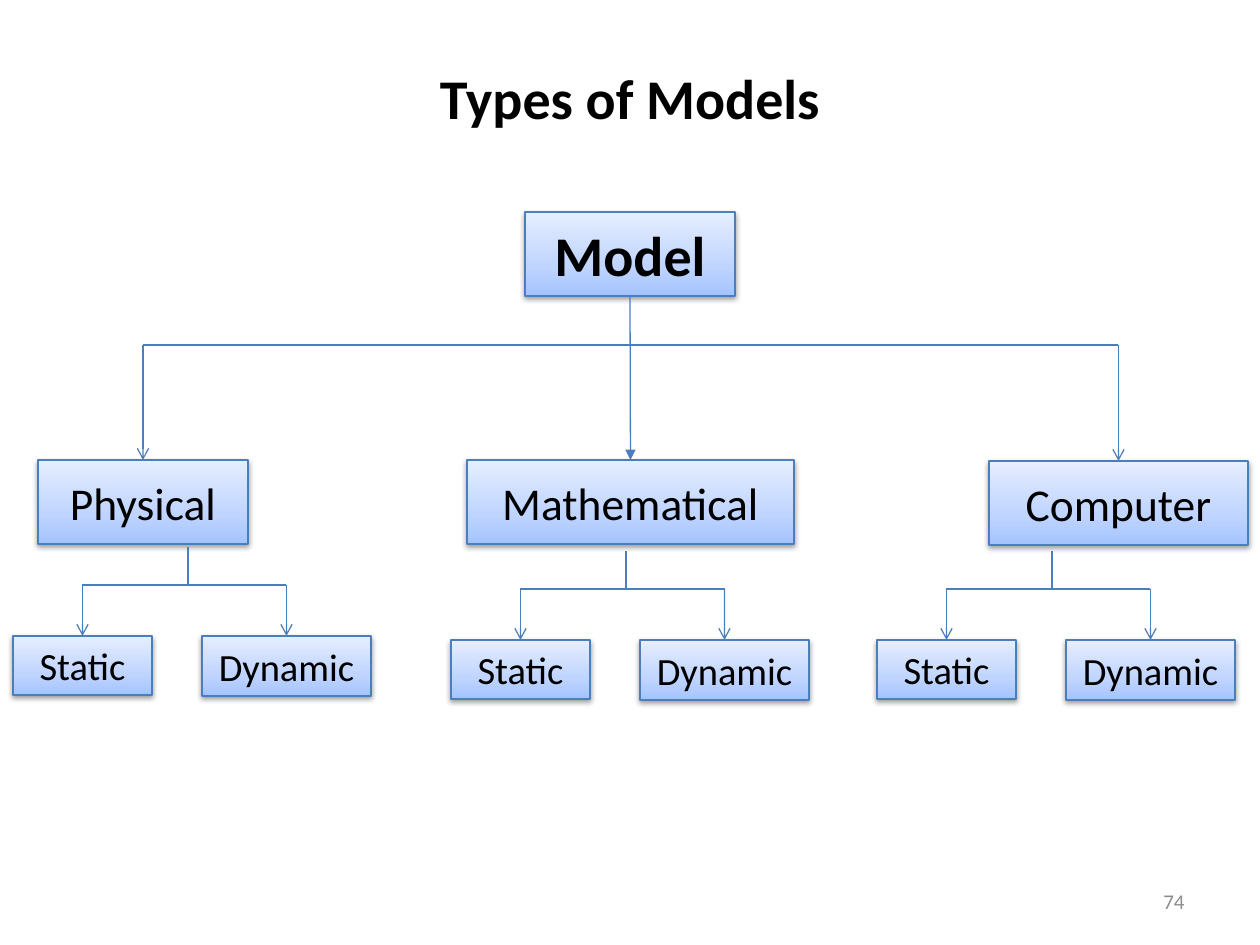
from copy import deepcopy

from lxml.etree import SubElement
from pptx import Presentation
from pptx.dml.color import RGBColor
from pptx.enum.shapes import MSO_CONNECTOR as Connector, MSO_SHAPE as Shape
from pptx.enum.text import MSO_ANCHOR as Anchor, PP_ALIGN as Align
from pptx.oxml.ns import qn
from pptx.util import Pt

# Content: label, then left, top, width, height in px
TITLE = ("Types of Models", (63, 53, 1134, 88))
PAGE_NUMBER = ("74", (903, 876, 294, 50))
ROOT = ("Model", (525, 212, 210, 84))
BRANCHES = [
    ("Physical", (38, 460, 210, 84)),
    ("Mathematical", (467, 460, 327, 84)),
    ("Computer", (989, 461, 259, 84)),
]
SUBTYPE_ORIGINS = [(13, 636), (451, 640), (877, 640)]
SUBTYPES = [("Static", (0, 0, 139, 59)), ("Dynamic", (189, 0, 169, 60))]
MAIN_RAIL_Y = 345
STEM_X, STEM_RISE, RAIL_RISE = 175, 89, 51  # measured from a subtype origin

# Style
BLACK = RGBColor(0x00, 0x00, 0x00)
GRAY = RGBColor(0x8C, 0x8C, 0x8C)
LINE_BLUE = RGBColor(0x4B, 0x7E, 0xBC)
GRADIENT = [
    (0, RGBColor(0xA4, 0xC4, 0xFF)),
    (0.35, RGBColor(0xBF, 0xD4, 0xFF)),
    (1, RGBColor(0xE6, 0xEE, 0xFF)),
]
HEADING = {"size": Pt(32), "bold": True}
BRANCH_FONT = {"size": Pt(26)}
SUBTYPE_FONT = {"size": Pt(22)}
EMU_PER_PX = 914400 / 126
TOP, BOTTOM = 0, 2


def px(*lengths):
    return [round(length * EMU_PER_PX) for length in lengths]


def write(shape, text, font_format, color=BLACK, align=Align.CENTER):
    frame = shape.text_frame
    frame.word_wrap = True
    frame.vertical_anchor = Anchor.MIDDLE
    paragraph = frame.paragraphs[0]
    paragraph.alignment = align
    run = paragraph.add_run()
    run.text = text
    for name, value in {"name": "Calibri", **font_format}.items():
        setattr(run.font, name, value)
    run.font.color.rgb = color


def add_shadow(shape):
    shape.shadow.inherit = False
    effects = shape._element.spPr.find(qn("a:effectLst"))
    shadow = SubElement(effects, qn("a:outerShdw"), blurRad="40000",
                        dist="20000", dir="5400000", rotWithShape="0")
    color = SubElement(shadow, qn("a:srgbClr"), val="000000")
    SubElement(color, qn("a:alpha"), val="38000")


def add_box(slide, label, area, font_format):
    box = slide.shapes.add_shape(Shape.RECTANGLE, *px(*area))
    box.fill.gradient()
    box.fill.gradient_angle = 90
    stop_list = box._element.spPr.find(qn("a:gradFill")).find(qn("a:gsLst"))
    stop_list.append(deepcopy(stop_list[0]))
    for stop, (position, color) in zip(box.fill.gradient_stops, GRADIENT):
        stop.position = position
        stop.color.rgb = color
    box.line.color.rgb = LINE_BLUE
    box.line.width = Pt(0.75)
    add_shadow(box)
    write(box, label, font_format)
    return box


def add_line(slide, start, end, head=None):
    line = slide.shapes.add_connector(Connector.STRAIGHT, *px(*start, *end))
    line.line.color.rgb = LINE_BLUE
    line.line.width = Pt(0.75)
    if head:
        SubElement(line.line._get_or_add_ln(), qn("a:tailEnd"), type=head)
    SubElement(line._element.spPr, qn("a:effectLst"))
    return line


def center_x(area):
    return area[0] + area[2] / 2


def add_drop(slide, box, area, rail_y):
    """Arrow from a rail straight down to the top of a box."""
    x = center_x(area)
    arrow = add_line(slide, (x, rail_y), (x, area[1]), "arrow")
    arrow.end_connect(box, TOP)


def main():
    presentation = Presentation()
    presentation.slide_width, presentation.slide_height = px(1260, 945)
    slide = presentation.slides.add_slide(presentation.slide_layouts[5])

    # Title and page number
    text, area = TITLE
    title = slide.shapes.title
    title.left, title.top, title.width, title.height = px(*area)
    write(title, text, HEADING)
    text, area = PAGE_NUMBER
    number = slide.shapes.add_textbox(*px(*area))
    write(number, text, {"size": Pt(12)}, GRAY, Align.RIGHT)

    # Root and its three branches
    root = add_box(slide, *ROOT, HEADING)
    branches = [add_box(slide, *branch, BRANCH_FONT) for branch in BRANCHES]
    areas = [area for _, area in BRANCHES]

    # Trunk, main rail and outer arrows
    x = center_x(ROOT[1])
    trunk = add_line(slide, (x, 296), (x, areas[1][1]), "triangle")
    trunk.begin_connect(root, BOTTOM)
    trunk.end_connect(branches[1], TOP)
    add_line(slide, (center_x(areas[0]), MAIN_RAIL_Y),
             (center_x(areas[2]), MAIN_RAIL_Y))
    for index in (0, 2):
        add_drop(slide, branches[index], areas[index], MAIN_RAIL_Y)

    # Static and dynamic subtypes under each branch
    for left, top in SUBTYPE_ORIGINS:
        rail_y = top - RAIL_RISE
        stem_x = left + STEM_X
        add_line(slide, (stem_x, top - STEM_RISE), (stem_x, rail_y))
        ends = []
        for label, (dx, dy, width, height) in SUBTYPES:
            area = (left + dx, top + dy, width, height)
            box = add_box(slide, label, area, SUBTYPE_FONT)
            add_drop(slide, box, area, rail_y)
            ends.append((center_x(area), rail_y))
        add_line(slide, *ends)

    presentation.save("out.pptx")


if __name__ == "__main__":
    main()
